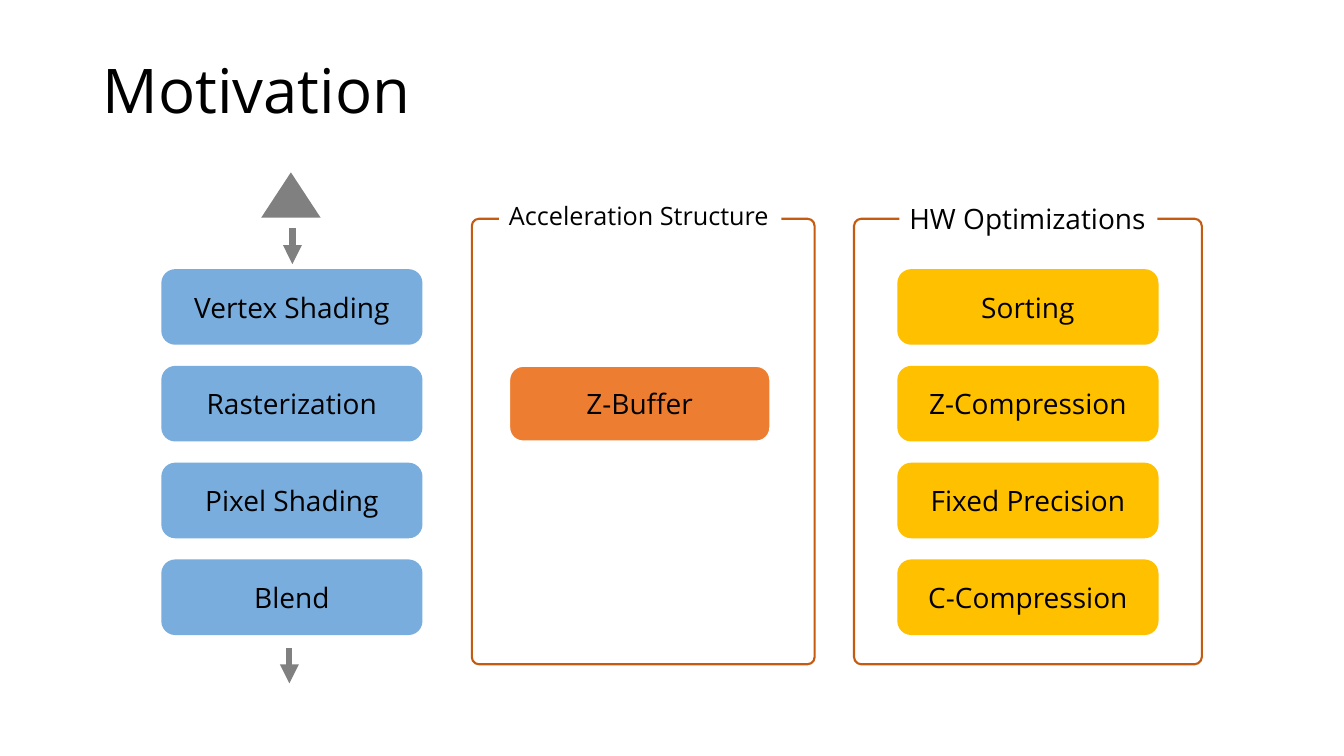
"""Build the Motivation slide: a rendering pipeline beside its acceleration structure and hardware optimizations."""
from lxml.etree import SubElement
from pptx import Presentation
from pptx.dml.color import RGBColor
from pptx.enum.shapes import MSO_CONNECTOR, MSO_SHAPE
from pptx.enum.text import MSO_ANCHOR, PP_ALIGN
from pptx.oxml.ns import qn
from pptx.util import Inches, Pt

COLORS = {
    "text": "000000",
    "white": "FFFFFF",
    "gray": "808080",
    "blue": "79ADDD",
    "orange": "ED7D31",
    "gold": "FFC000",
    "frame": "C55A11",
}
FONT = "Open Sans"

TITLE = "Motivation"
PANELS = [
    {"caption": "HW Optimizations", "size": 20,
     "frame": (8.47, 2.17, 3.45, 4.42), "label": (8.92, 1.95, 2.56, 0.44)},
    {"caption": "Acceleration Structure", "size": 18,
     "frame": (4.68, 2.17, 3.4, 4.42), "label": (4.95, 1.94, 2.8, 0.4)},
]
STAGES = [
    {"left": 1.6, "fill": "blue", "line": None, "first_row": 0,
     "names": ["Vertex Shading", "Rasterization", "Pixel Shading", "Blend"]},
    {"left": 5.05, "fill": "orange", "line": "white", "first_row": 1,
     "names": ["Z-Buffer"]},
    {"left": 8.9, "fill": "gold", "line": None, "first_row": 0,
     "names": ["Sorting", "Z-Compression", "Fixed Precision", "C-Compression"]},
]
TRIANGLE = (2.59, 1.71, 0.59, 0.45)
ARROWS = [(2.9, 2.26, 2.62), (2.87, 6.43, 6.78)]

STAGE_TOP, STAGE_PITCH = 2.67, 0.96
STAGE_WIDTH, STAGE_HEIGHT = 2.59, 0.75


def color(name):
    return RGBColor.from_string(COLORS[name])


def write(frame, text, size=20, align=PP_ALIGN.CENTER, anchor=MSO_ANCHOR.MIDDLE,
          wrap=True, spacing=None):
    frame.word_wrap = wrap
    frame.vertical_anchor = anchor
    paragraph = frame.paragraphs[0]
    paragraph.alignment = align
    paragraph.line_spacing = spacing
    run = paragraph.add_run()
    run.text = text
    run.font.name = FONT
    run.font.size = Pt(size)
    run.font.color.rgb = color("text")


def add_block(slide, kind, box, fill, line=None, corner=None):
    block = slide.shapes.add_shape(kind, *map(Inches, box))
    block.shadow.inherit = False
    block.fill.solid()
    block.fill.fore_color.rgb = color(fill)
    if line:
        block.line.color.rgb = color(line)
        block.line.width = Pt(1.5)
    else:
        block.line.fill.background()
    if corner is not None:
        block.adjustments[0] = corner
    return block


def add_arrow(slide, x, top, bottom):
    arrow = slide.shapes.add_connector(
        MSO_CONNECTOR.STRAIGHT, Inches(x), Inches(top), Inches(x), Inches(bottom))
    arrow.line.color.rgb = color("gray")
    arrow.line.width = Pt(4.5)
    SubElement(arrow.line._get_or_add_ln(), qn("a:tailEnd"), type="triangle")
    SubElement(arrow._element.spPr, qn("a:effectLst"))


def main():
    deck = Presentation()
    deck.slide_width, deck.slide_height = Inches(13.33), Inches(7.5)
    slide = deck.slides.add_slide(deck.slide_layouts[5])

    title = slide.shapes.title
    title.left, title.top = Inches(0.92), Inches(0.4)
    title.width, title.height = Inches(11.5), Inches(1.05)
    write(title.text_frame, TITLE, size=44, align=PP_ALIGN.LEFT, spacing=0.9)

    for panel in PANELS:
        add_block(slide, MSO_SHAPE.ROUNDED_RECTANGLE, panel["frame"], "white",
                  line="frame", corner=0.021)
        label = add_block(slide, MSO_SHAPE.RECTANGLE, panel["label"], "white")
        write(label.text_frame, panel["caption"], size=panel["size"],
              align=PP_ALIGN.LEFT, anchor=MSO_ANCHOR.TOP, wrap=False)

    for column in STAGES:
        for row, name in enumerate(column["names"], column["first_row"]):
            box = (column["left"], STAGE_TOP + row * STAGE_PITCH,
                   STAGE_WIDTH, STAGE_HEIGHT)
            stage = add_block(slide, MSO_SHAPE.ROUNDED_RECTANGLE, box,
                              column["fill"], line=column["line"], corner=0.184)
            write(stage.text_frame, name)

    add_block(slide, MSO_SHAPE.ISOSCELES_TRIANGLE, TRIANGLE, "gray")
    for x, top, bottom in ARROWS:
        add_arrow(slide, x, top, bottom)

    deck.save("out.pptx")


if __name__ == "__main__":
    main()
